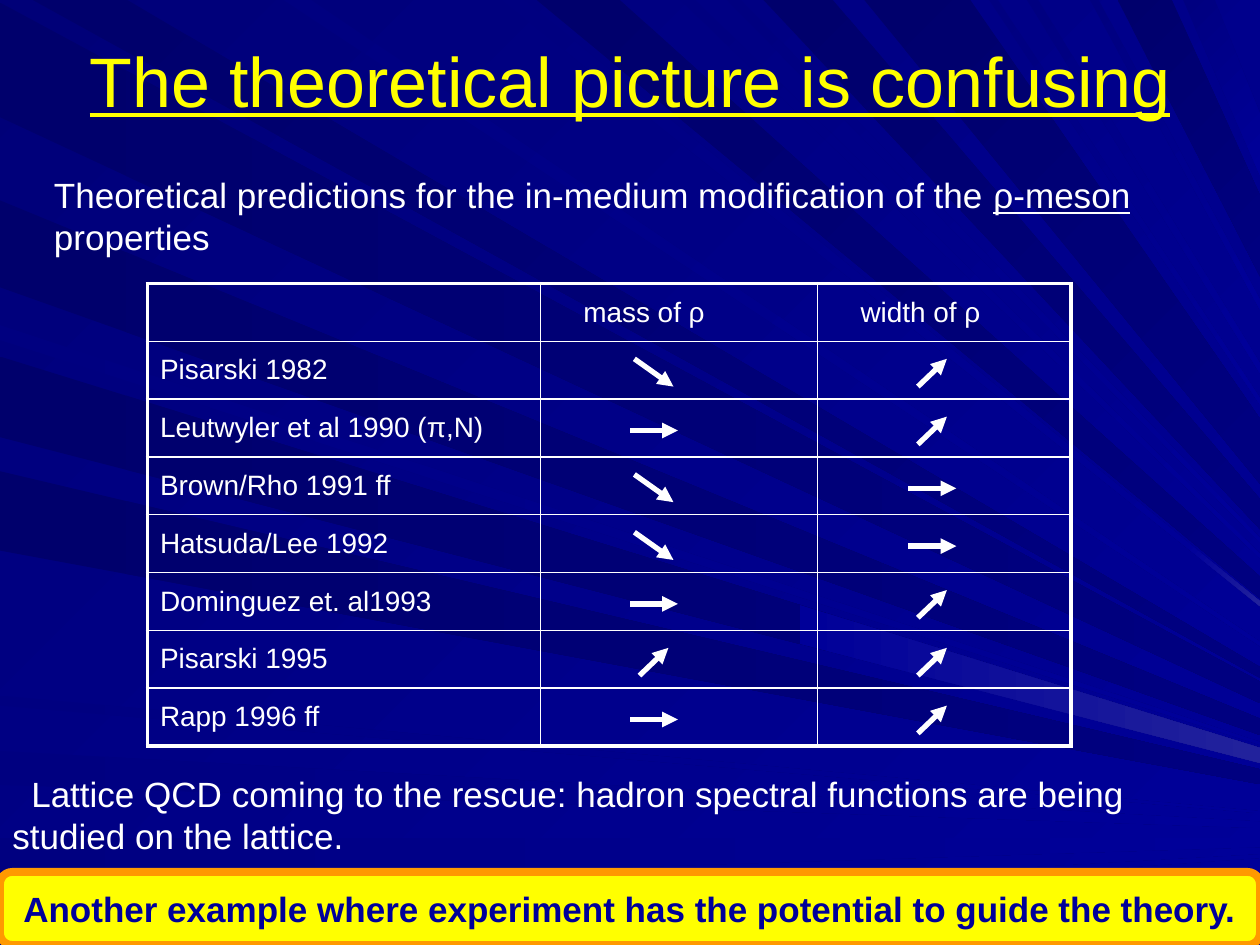
"""Build a slide on theoretical predictions for the in-medium rho meson."""
from lxml.etree import SubElement
from pptx import Presentation
from pptx.dml.color import RGBColor
from pptx.enum.shapes import MSO_CONNECTOR, MSO_SHAPE
from pptx.enum.text import MSO_ANCHOR, PP_ALIGN
from pptx.oxml.ns import qn
from pptx.util import Inches, Pt

WHITE = RGBColor(0xFF, 0xFF, 0xFF)
YELLOW = RGBColor(0xFF, 0xFF, 0x00)
ORANGE = RGBColor(0xFF, 0x99, 0x00)
MIDNIGHT = RGBColor(0x00, 0x00, 0x6C)
DARK_BLUE = RGBColor(0x00, 0x00, 0x78)
NAVY = RGBColor(0x00, 0x00, 0x80)
BLUE = RGBColor(0x00, 0x00, 0x99)
GLINT = RGBColor(0x22, 0x22, 0x9C)

COLUMNS, ROWS = 10, 7.5
FOCUS_X, FOCUS_Y = 12.3, 6.65
WIDE_BEAM = 0.4
LEFT_EDGE_BEAMS = [(0.02, 0.91), (1.59, 0.69), (2.58, 0.12), (2.83, 0.64), (3.74, 0.63),
                   (5.52, 0.08), (5.96, 0.27), (6.65, 0.39), (7.35, 0.15)]
TOP_EDGE_BEAMS = [(0.26, 0.75), (2.25, 0.22), (3.98, 0.18), (4.26, 0.66), (5.4, 0.12),
                  (5.77, 0.11), (6.06, 0.55), (6.86, 0.84), (7.85, 0.07), (8.15, 0.09),
                  (8.65, 0.07), (8.87, 0.43), (9.39, 0.25)]
GLINT_STARTS = {2.83: 6.35, 3.98: 9.44}

FALLS, STAYS, RISES = (0.31, 0.22), (0.38, 0), (0.23, -0.22)
PREDICTIONS = [
    ("Pisarski 1982", FALLS, RISES),
    ("Leutwyler et al 1990 (π,N)", STAYS, RISES),
    ("Brown/Rho 1991 ff", FALLS, STAYS),
    ("Hatsuda/Lee 1992", FALLS, STAYS),
    ("Dominguez et. al1993", STAYS, RISES),
    ("Pisarski 1995", RISES, RISES),
    ("Rapp 1996 ff", STAYS, RISES),
]
MASS_CENTER, WIDTH_CENTER = 5.19, 7.4
TABLE_TOP, TABLE_HEIGHT = 2.25, 3.67


def write(paragraph, text, size=20, color=WHITE, bold=False, underline=False):
    run = paragraph.add_run()
    run.text = text
    run.font.name = "Arial"
    run.font.size = Pt(size)
    run.font.color.rgb = color
    run.font.bold = bold
    run.font.underline = underline


def paint_gradient(fill, start, end, angle):
    fill.gradient()
    fill.gradient_angle = -angle % 360
    for stop, color in zip(fill.gradient_stops, (start, end)):
        stop.color.rgb = color


prs = Presentation()
prs.slide_width, prs.slide_height = Inches(COLUMNS), Inches(ROWS)
COL, ROW = prs.slide_width / COLUMNS, prs.slide_height / ROWS
slide = prs.slides.add_slide(prs.slide_layouts[5])
shapes = slide.shapes
paint_gradient(slide.background.fill, DARK_BLUE, BLUE, 45)

beams = [((0, y), (0, y + width), width, 0) for y, width in LEFT_EDGE_BEAMS]
beams += [((x, 0), (x + width, 0), width, 45) for x, width in TOP_EDGE_BEAMS]
sections = []
for first, second, width, angle in beams:
    start, end = (MIDNIGHT, NAVY) if width >= WIDE_BEAM else (NAVY, BLUE)
    sections.append((first, second, 0, start, end, angle))
    glint_start = GLINT_STARTS.get(max(first))
    if glint_start:
        sections.append((first, second, glint_start, BLUE, GLINT, angle))

for first, second, x_from, start, end, angle in sections:
    corners = []
    for (edge_x, edge_y), x in [(first, max(x_from, first[0])), (second, max(x_from, second[0])),
                                (second, COLUMNS), (first, COLUMNS)]:
        travelled = (x - edge_x) / (FOCUS_X - edge_x)
        corners.append((x * COL, (edge_y + (FOCUS_Y - edge_y) * travelled) * ROW))
    builder = shapes.build_freeform(*corners[0])
    builder.add_line_segments(corners[1:], close=True)
    beam = builder.convert_to_shape()
    beam.shadow.inherit = False
    beam.line.fill.background()
    paint_gradient(beam.fill, start, end, angle)

title = shapes.title
shapes._spTree.append(title._element)
title.left, title.top = int(0.5 * COL), int(0.17 * ROW)
title.width, title.height = int(9 * COL), int(0.92 * ROW)
title.text_frame.vertical_anchor = MSO_ANCHOR.MIDDLE
heading = title.text_frame.paragraphs[0]
heading.alignment = PP_ALIGN.CENTER
write(heading, "The theoretical picture is confusing", size=40, color=YELLOW, underline=True)

labels = [("", "mass of ρ", "width of ρ")] + [(author, "", "") for author, *_ in PREDICTIONS]
table = shapes.add_table(len(labels), 3, int(1.17 * COL), int(TABLE_TOP * ROW),
                         int(7.33 * COL), int(TABLE_HEIGHT * ROW)).table
table.first_row = table.horz_banding = False
for column, share in zip(table.columns, (3.12, 2.2, 2.01)):
    column.width = int(share * COL)
for r, row_labels in enumerate(labels):
    for c, label in enumerate(row_labels):
        cell = table.cell(r, c)
        cell.vertical_anchor = MSO_ANCHOR.MIDDLE
        if label:
            write(cell.text_frame.paragraphs[0], label, size=16)
        if r == 0:
            cell.margin_left = int(0.34 * COL)
        outer_edges = {"a:lnL": c == 0, "a:lnR": c == 2,
                       "a:lnT": r == 0, "a:lnB": r == len(labels) - 1}
        for edge, is_outer in outer_edges.items():
            border = SubElement(cell._tc.get_or_add_tcPr(), qn(edge),
                                w=str(Pt(2.25 if is_outer else 1)))
            paint = SubElement(border, qn("a:solidFill"))
            SubElement(paint, qn("a:srgbClr"), val=str(WHITE))
        cell.fill.background()

paragraphs = []
for left, top, width in [(0.33, 1.33, 8.93), (0, 6.08, 9.42)]:
    frame = shapes.add_textbox(int(left * COL), int(top * ROW),
                               int(width * COL), int(0.77 * ROW)).text_frame
    frame.word_wrap = True
    paragraphs.append(frame.paragraphs[0])
intro, outlook = paragraphs
write(intro, "Theoretical predictions for the in-medium modification of the ")
write(intro, "ρ-meson", underline=True)
write(intro, " properties")
outlook._p.get_or_add_pPr().set("indent", str(int(0.15 * COL)))
write(outlook, "Lattice QCD coming to the rescue: hadron spectral functions "
               "are being studied on the lattice.")

row_height = TABLE_HEIGHT / len(labels)
for r, (_, *trends) in enumerate(PREDICTIONS, start=1):
    center_y = TABLE_TOP + (r + 0.5) * row_height + 0.02
    for center_x, (dx, dy) in zip((MASS_CENTER, WIDTH_CENTER), trends):
        arrow = shapes.add_connector(
            MSO_CONNECTOR.STRAIGHT,
            int((center_x - dx / 2) * COL), int((center_y - dy / 2) * ROW),
            int((center_x + dx / 2) * COL), int((center_y + dy / 2) * ROW))
        arrow.line.color.rgb = WHITE
        arrow.line.width = Pt(3)
        SubElement(arrow.line._get_or_add_ln(), qn("a:tailEnd"), type="triangle")
        SubElement(arrow._element.spPr, qn("a:effectLst"))

banner = shapes.add_shape(MSO_SHAPE.FLOWCHART_ALTERNATE_PROCESS, 0, int(6.92 * ROW),
                          int(COLUMNS * COL), int(0.58 * ROW))
banner.shadow.inherit = False
banner.fill.solid()
banner.fill.fore_color.rgb = YELLOW
banner.line.color.rgb = ORANGE
banner.line.width = Pt(4.5)
banner.text_frame.vertical_anchor = MSO_ANCHOR.MIDDLE
conclusion = banner.text_frame.paragraphs[0]
conclusion.alignment = PP_ALIGN.CENTER
write(conclusion, "Another example where experiment has the potential to guide the theory.",
      color=BLUE, bold=True)

prs.save("out.pptx")
